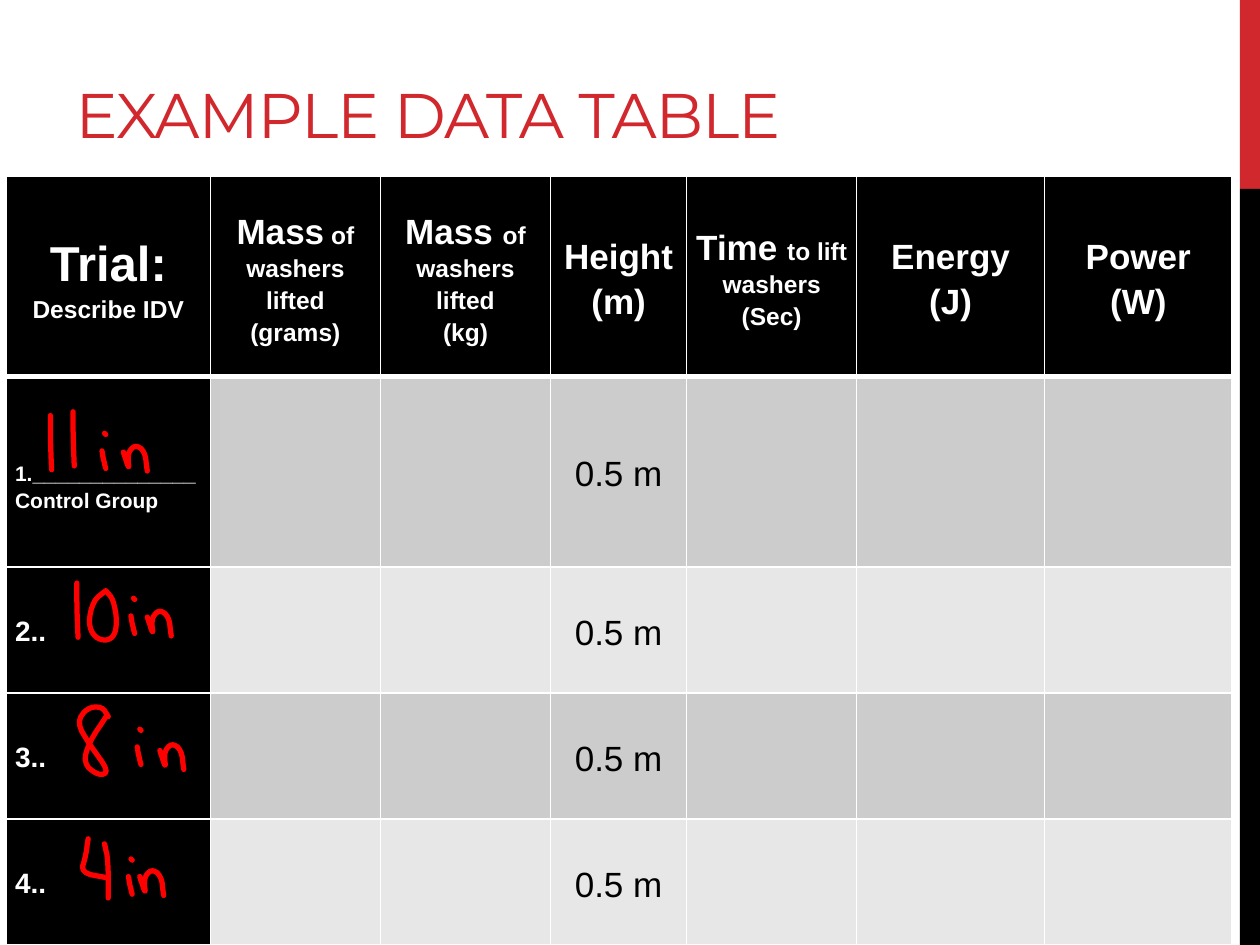
import pptx
import pptx.util
import pptx.dml.color
import pptx.enum.shapes
import pptx.enum.text
import pptx.oxml
import lxml.etree
from dataclasses import dataclass

Inches, Pt = pptx.util.Inches, pptx.util.Pt
ALIGN, ANCHOR = pptx.enum.text.PP_ALIGN, pptx.enum.text.MSO_ANCHOR
NS = "http://schemas.openxmlformats.org/drawingml/2006/main"


@dataclass(frozen=True)
class Theme:
    red: str = "D1282E"
    ink: str = "FF0000"
    black: str = "000000"
    white: str = "FFFFFF"
    bands: tuple = ("CCCCCC", "E7E7E7")
    head_font: str = "Montserrat"
    body_font: str = "Arial"
    title: int = 36
    trial: int = 28
    big: int = 20
    row: int = 16
    small: int = 14
    note: int = 12


T = Theme()
TITLE = "EXAMPLE DATA TABLE"
COLS = (1.62, 1.35, 1.35, 1.08, 1.35, 1.49, 1.49)
ROWS = (1.59, 1.51, 1, 1, 1)
BARS = [(0, 1.5, T.red), (1.5, 6, T.black)]  # top, height, colour

# Each cell is a list of paragraphs, each paragraph a list of (text, size)
HEADS = [
    [[("Trial: ", T.trial), ("Describe IDV", T.small)]],
    [[("Mass", T.big), (" of washers lifted", T.small)], [("(grams)", T.small)]],
    [[("Mass ", T.big), ("of washers lifted", T.small)], [("(kg)", T.small)]],
    [[("Height", T.big)], [("(m)", T.big)]],
    [[("Time ", T.big), ("to lift washers (Sec)", T.small)]],
    [[("Energy", T.big)], [("(J)", T.big)]],
    [[("Power", T.big)], [("(W)", T.big)]],
]
TRIALS = [
    [[("1.______________", T.note)], [("Control Group", T.note)]],
    [[("2..", T.row)]],
    [[("3..", T.row)]],
    [[("4..", T.row)]],
]
HEIGHT = [[("0.5 m", T.big)]]
HEIGHT_COL = 3

# Pen strokes of each handwritten sign, in hundredths of an inch
SIGNS = {
    "1": [[(0, 0), (0, 21), (1, 43)]],
    "0": [[(13, 0), (3, 8), (-1, 26), (4, 37), (13, 40), (20, 36), (22, 24),
           (19, 7), (13, 0)]],
    "8": [[(23, 7), (18, -1), (6, 0), (-2, 12), (8, 29), (24, 51), (15, 54),
           (3, 44), (8, 27), (22, 6)]],
    "4": [[(5, 0), (3, 14), (-1, 27), (20, 31)], [(18, 4), (21, 17), (21, 47)]],
    "i": [[(0, 0), (1, 6), (3, 14)], [(2, -14), (3, -13)]],
    "n": [[(0, 4), (5, 19), (3, 6), (9, -2), (17, 3), (19, 19)]],
}
# Sign, left, top
INK = [
    ("1", 40, 330), ("1", 58, 327), ("i", 81, 358), ("n", 98, 355),
    ("1", 61, 463), ("0", 71, 469), ("i", 104, 489), ("n", 117, 486),
    ("8", 63, 562), ("i", 109, 593), ("n", 127, 592),
    ("4", 65, 666), ("i", 102, 696), ("n", 111, 692),
]


def rgb(code):
    return pptx.dml.color.RGBColor.from_string(code)


def edge(cell, top, base):
    """White cell borders; top and base are widths in points."""
    props = cell._tc.get_or_add_tcPr()
    for side, width in (("L", 1), ("R", 1), ("T", top), ("B", base)):
        props.append(pptx.oxml.parse_xml(
            f'<a:ln{side} xmlns:a="{NS}" w="{Pt(width)}"><a:solidFill>'
            f'<a:srgbClr val="{T.white}"/></a:solidFill></a:ln{side}>'))


def write(cell, paras, color, bold, align):
    frame = cell.text_frame
    for i, parts in enumerate(paras):
        para = frame.add_paragraph() if i else frame.paragraphs[0]
        para.alignment, para.line_spacing = align, 1.15
        for text, size in parts:
            run = para.add_run()
            run.text = text
            font = run.font
            font.name, font.size, font.bold = T.body_font, Pt(size), bold
            font.color.rgb = rgb(color)


def add_title(slide):
    title = slide.shapes.title
    title.left, title.top, title.width, title.height = map(Inches, (0.5, 0, 9, 1.25))
    frame = title.text_frame
    frame.text = TITLE
    frame.vertical_anchor = ANCHOR.BOTTOM
    frame.auto_size = pptx.enum.text.MSO_AUTO_SIZE.NONE
    para = frame.paragraphs[0]
    para.alignment = ALIGN.LEFT
    font = para.runs[0].font
    font.name, font.size, font.color.rgb = T.head_font, Pt(T.title), rgb(T.red)
    font._element.set("spc", "-60")


def add_bars(slide):
    for top, high, color in BARS:
        bar = slide.shapes.add_shape(
            pptx.enum.shapes.MSO_SHAPE.RECTANGLE,
            Inches(9.84), Inches(top), Inches(0.16), Inches(high))
        bar.shadow.inherit = False
        bar.fill.solid()
        bar.fill.fore_color.rgb = rgb(color)
        bar.line.fill.background()


def add_grid(slide):
    grid = slide.shapes.add_table(
        len(ROWS), len(COLS), Inches(0.05), Inches(1.4),
        Inches(sum(COLS)), Inches(sum(ROWS))).table
    for col, width in zip(grid.columns, COLS):
        col.width = Inches(width)
    for r, high in enumerate(ROWS):
        grid.rows[r].height = Inches(high)
        for c in range(len(COLS)):
            cell = grid.cell(r, c)
            edge(cell, 3 if r == 1 else 1, 3 if r == 0 else 1)
            cell.fill.solid()
            dark = r == 0 or c == 0
            cell.fill.fore_color.rgb = rgb(T.black if dark else T.bands[(r - 1) % 2])
            cell.vertical_anchor = ANCHOR.MIDDLE
            cell.margin_left = cell.margin_right = Inches(0.07)
            cell.margin_top = cell.margin_bottom = 0
            if r == 0:
                write(cell, HEADS[c], T.white, True, ALIGN.CENTER)
            elif c == 0:
                write(cell, TRIALS[r - 1], T.white, True, ALIGN.LEFT)
            elif c == HEIGHT_COL:
                write(cell, HEIGHT, T.black, False, ALIGN.CENTER)
    grid.cell(1, 0).margin_top = Inches(0.22)


def smooth(dots, turns=2):
    """Round a stroke by cutting its corners, keeping both ends."""
    for _ in range(turns):
        cut = [dots[0]]
        for (x, y), (u, v) in zip(dots, dots[1:]):
            cut += [(x + (u - x) * t, y + (v - y) * t) for t in (0.25, 0.75)]
        dots = cut + [dots[-1]]
    return dots


def add_ink(slide):
    for sign, left, top in INK:
        for stroke in SIGNS[sign]:
            # Thousandths of an inch keep the curves fine
            start, *rest = [((left + x) * 10, (top + y) * 10)
                            for x, y in smooth(stroke)]
            pen = slide.shapes.build_freeform(*start, scale=Inches(0.001))
            pen.add_line_segments(rest, close=False)
            mark = pen.convert_to_shape()
            mark.shadow.inherit = False
            mark.fill.background()
            mark.line.color.rgb, mark.line.width = rgb(T.ink), Pt(3)
            line = mark._element.spPr.find(f"{{{NS}}}ln")
            line.set("cap", "rnd")
            lxml.etree.SubElement(line, f"{{{NS}}}round")


def main():
    deck = pptx.Presentation()
    deck.slide_width, deck.slide_height = Inches(10), Inches(7.5)
    slide = deck.slides.add_slide(deck.slide_layouts[5])
    add_bars(slide)
    add_title(slide)
    add_grid(slide)
    add_ink(slide)
    deck.save("out.pptx")


if __name__ == "__main__":
    main()
